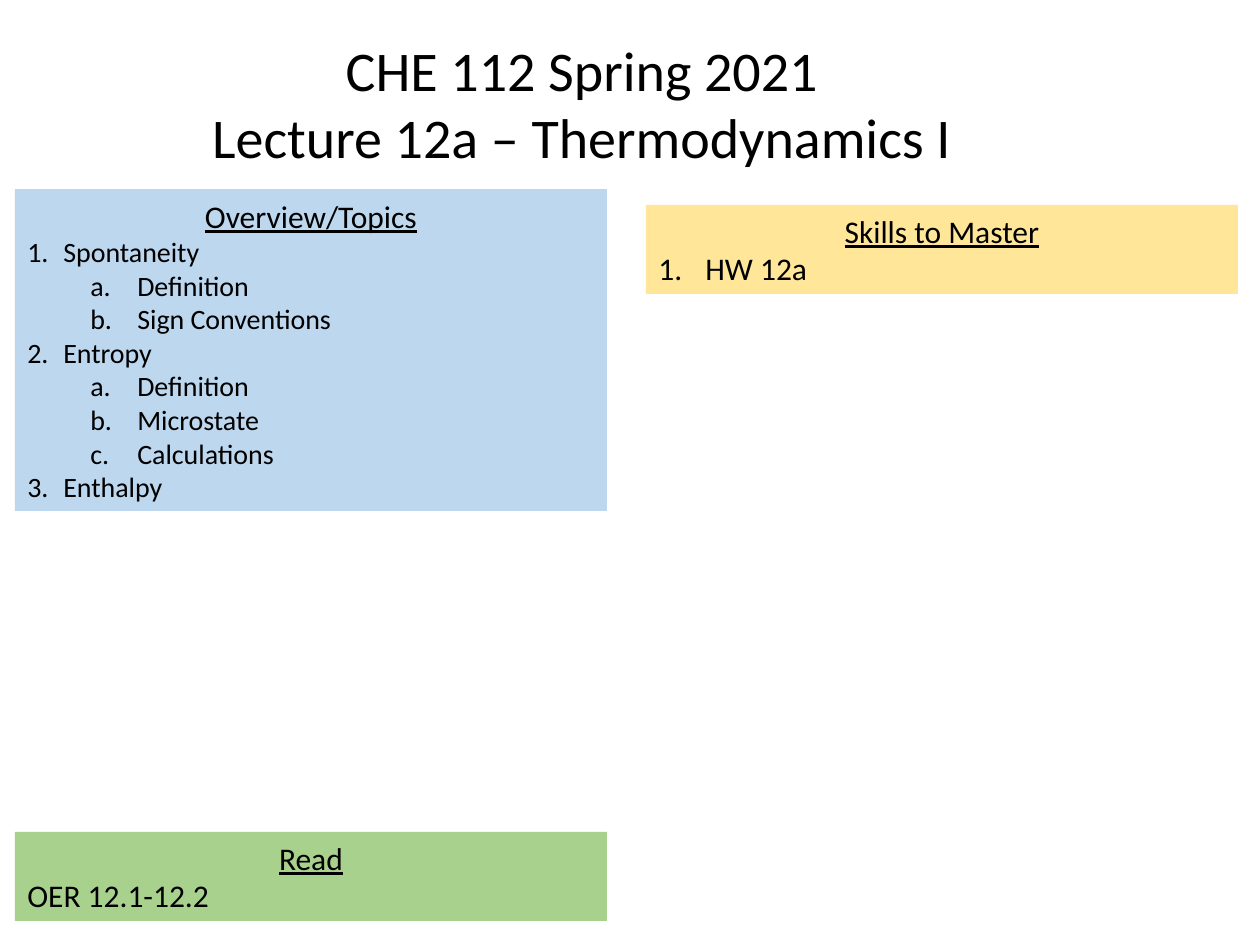
from lxml.etree import SubElement
from pptx import Presentation
from pptx.dml.color import RGBColor
from pptx.enum.shapes import MSO_SHAPE as Shape
from pptx.enum.text import MSO_AUTO_SIZE as Fit, PP_ALIGN as Align
from pptx.oxml.ns import qn
from pptx.util import Pt

SCALE = 914400 / 126
BOX_WIDTH = 592
LEFT, RIGHT = 15, 646

STYLES = {
    "title": {"size": 32, "align": Align.CENTER},
    "heading": {"size": 18, "align": Align.CENTER, "underline": True},
    "plain": {"size": 18},
    "skill": {"size": 18, "number": "arabicPeriod", "margin": 47, "hang": 47},
    "topic": {"size": 16, "number": "arabicPeriod", "margin": 36, "hang": 36},
    "subtopic": {"size": 16, "number": "alphaLcPeriod", "margin": 110, "hang": 47, "level": 1},
}

TITLE = [("title", "CHE 112 Spring 2021"), ("title", "Lecture 12a – Thermodynamics I")]
PANELS = [
    ((LEFT, 189, BOX_WIDTH, 322), "BDD7EE", [
        ("heading", "Overview/Topics"),
        ("topic", "Spontaneity"),
        ("subtopic", "Definition"),
        ("subtopic", "Sign Conventions"),
        ("topic", "Entropy"),
        ("subtopic", "Definition"),
        ("subtopic", "Microstate"),
        ("subtopic", "Calculations"),
        ("topic", "Enthalpy"),
    ]),
    ((RIGHT, 205, BOX_WIDTH, 89), "FFE699", [("heading", "Skills to Master"), ("skill", "HW 12a")]),
    ((LEFT, 832, BOX_WIDTH, 89), "A9D18E", [("heading", "Read"), ("plain", "OER 12.1-12.2")]),
]


def px(length):
    """Turn px into EMU."""
    return round(length * SCALE)


def color(value):
    """Turn a hex string into a colour."""
    return RGBColor.from_string(value)


def write(box, lines, wrap=True):
    """Fill a box with styled lines."""
    frame = box.text_frame
    frame.word_wrap = wrap
    frame.auto_size = Fit.SHAPE_TO_FIT_TEXT
    for index, (name, text) in enumerate(lines):
        style = STYLES[name]
        para = frame.add_paragraph() if index else frame.paragraphs[0]
        para.alignment = style.get("align", Align.LEFT)
        para.level = style.get("level", 0)
        span = para.add_run()
        span.text = text
        formats = {"name": "Calibri", "size": Pt(style["size"]), "underline": style.get("underline", False)}
        for key, value in formats.items():
            setattr(span.font, key, value)
        span.font.color.rgb = color("000000")
        if "number" in style:
            props = para._p.get_or_add_pPr()
            props.set("marL", str(px(style["margin"])))
            props.set("indent", str(-px(style["hang"])))
            SubElement(props, qn("a:buFont"), typeface="+mj-lt")
            SubElement(props, qn("a:buAutoNum"), type=style["number"])


def main():
    """Build the lecture overview slide."""
    deck = Presentation()
    deck.slide_width, deck.slide_height = px(1260), px(945)
    page = deck.slides.add_slide(deck.slide_layouts[6])
    for area, fill, lines in PANELS:
        box = page.shapes.add_shape(Shape.RECTANGLE, *map(px, area))
        box.shadow.inherit = False
        box.fill.solid()
        box.fill.fore_color.rgb = color(fill)
        box.line.fill.background()
        write(box, lines)
    write(page.shapes.add_textbox(*map(px, (188, 29, 788, 148))), TITLE, wrap=False)
    deck.save("out.pptx")


if __name__ == "__main__":
    main()
